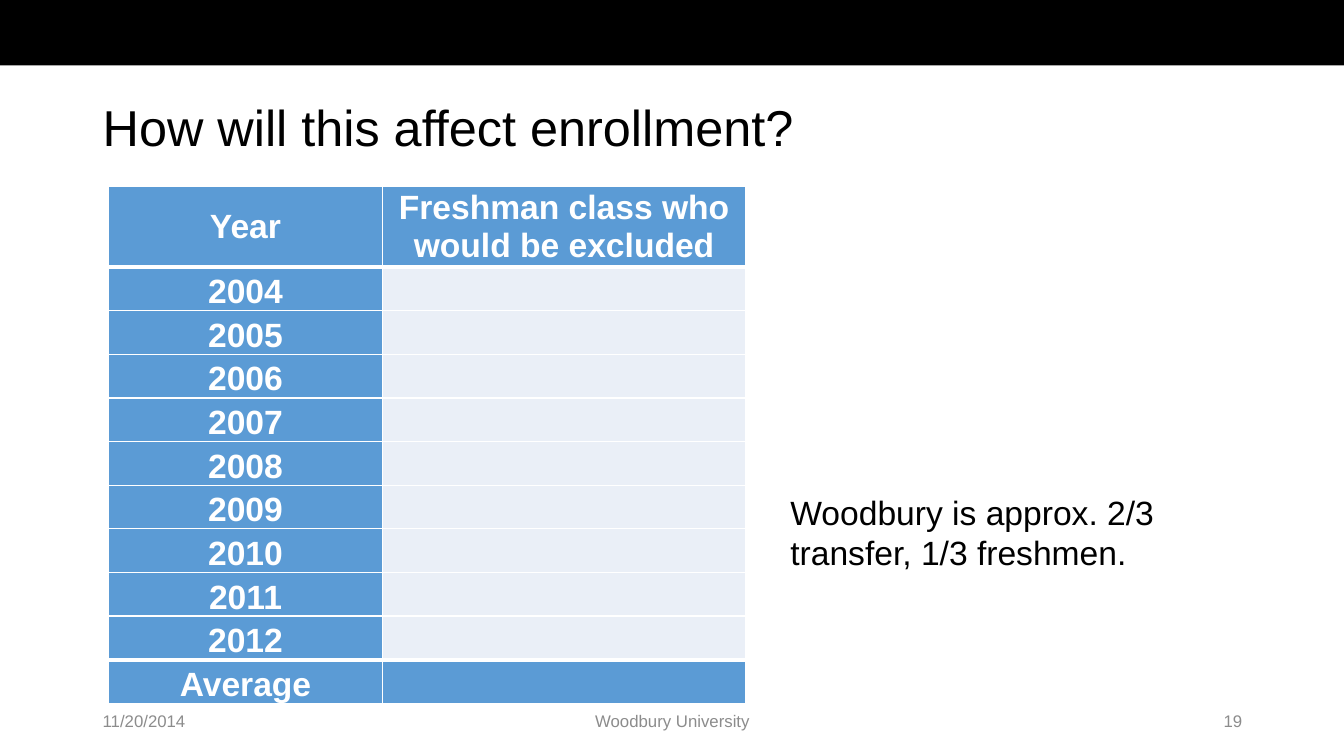
from lxml.etree import SubElement
from pptx import Presentation
from pptx.dml.color import RGBColor
from pptx.enum.shapes import MSO_SHAPE
from pptx.enum.text import MSO_ANCHOR, PP_ALIGN
from pptx.oxml.ns import qn
from pptx.util import Inches, Pt

WIDTH, HEIGHT = 13.33, 7.5
BLACK, WHITE, GREY = "000000", "FFFFFF", "8C8C8C"
BLUE, PALE = "5B9BD5", "EAEFF7"

TITLE = "How will this affect enrollment?"
NOTE = "Woodbury is approx. 2/3 transfer, 1/3 freshmen."
HEADINGS = ("Year", "Freshman class who would be excluded")
YEARS = [str(year) for year in range(2004, 2013)]
TABLE_ROWS = [HEADINGS] + [(year, "") for year in YEARS] + [("Average", "")]
FOOTERS = [  # text, left, width, alignment
    ("11/20/2014", 0.92, 3, PP_ALIGN.LEFT),
    ("Woodbury University", 4.42, 4.5, PP_ALIGN.CENTER),
    ("19", 9.42, 3, PP_ALIGN.RIGHT),
]

TABLE_LEFT, TABLE_TOP, TABLE_HEIGHT = 1.08, 1.85, 5.08
COLUMN_WIDTHS = (2.71, 3.61)
HEADER_HEIGHT = 0.75
ROW_HEIGHT = (TABLE_HEIGHT - HEADER_HEIGHT) / (len(TABLE_ROWS) - 1)


def color(code):
    return RGBColor.from_string(code)


def style_paragraph(para, size, code, align=PP_ALIGN.LEFT, bold=False):
    para.alignment = align
    for span in para.runs:
        span.font.name = "Arial"
        span.font.size = Pt(size)
        span.font.bold = bold
        span.font.color.rgb = color(code)


def add_text(page, text, area, size, code, align=PP_ALIGN.LEFT,
             anchor=MSO_ANCHOR.MIDDLE):
    box = page.shapes.add_textbox(*map(Inches, area))
    frame = box.text_frame
    frame.word_wrap = True
    frame.vertical_anchor = anchor
    frame.text = text
    style_paragraph(frame.paragraphs[0], size, code, align)
    return frame.paragraphs[0]


def add_borders(cell, top, bottom):
    """Draw white cell borders; top and bottom are widths in points."""
    properties = cell._tc.get_or_add_tcPr()
    for side, width in (("L", 1), ("R", 1), ("T", top), ("B", bottom)):
        line = SubElement(properties, qn(f"a:ln{side}"), w=str(Pt(width)))
        fill = SubElement(line, qn("a:solidFill"))
        SubElement(fill, qn("a:srgbClr"), val=WHITE)


def add_enrollment_table(page):
    last = len(TABLE_ROWS) - 1
    table = page.shapes.add_table(
        len(TABLE_ROWS), len(HEADINGS), Inches(TABLE_LEFT), Inches(TABLE_TOP),
        Inches(sum(COLUMN_WIDTHS)), Inches(TABLE_HEIGHT)).table
    table.horz_banding = False
    for column, width in zip(table.columns, COLUMN_WIDTHS):
        column.width = Inches(width)
    for r, texts in enumerate(TABLE_ROWS):
        table.rows[r].height = Inches(ROW_HEIGHT if r else HEADER_HEIGHT)
        for c, text in enumerate(texts):
            cell = table.cell(r, c)
            cell.margin_top = cell.margin_bottom = 0
            cell.vertical_anchor = MSO_ANCHOR.BOTTOM if r else MSO_ANCHOR.MIDDLE
            add_borders(cell, 3 if r in (1, last) else 1,
                        3 if r in (0, last - 1) else 1)
            cell.fill.solid()
            is_body = c == 1 and 0 < r < last
            cell.fill.fore_color.rgb = color(PALE if is_body else BLUE)
            if text:
                cell.text_frame.text = text
                style_paragraph(cell.text_frame.paragraphs[0], 24, WHITE,
                                PP_ALIGN.CENTER, bold=True)


def main():
    deck = Presentation()
    deck.slide_width, deck.slide_height = Inches(WIDTH), Inches(HEIGHT)
    page = deck.slides.add_slide(deck.slide_layouts[6])

    banner = page.shapes.add_shape(
        MSO_SHAPE.RECTANGLE, 0, 0, Inches(WIDTH), Inches(0.65))
    banner.shadow.inherit = False
    banner.fill.solid()
    banner.fill.fore_color.rgb = color(BLACK)
    banner.line.fill.background()

    title = add_text(page, TITLE, (0.92, 0.74, 11.5, 1.1), 36, BLACK)
    title.line_spacing = 0.9
    for text, left, width, align in FOOTERS:
        add_text(page, text, (left, 6.95, width, 0.4), 12, GREY, align)
    add_enrollment_table(page)
    add_text(page, NOTE, (7.74, 4.83, 4.98, 0.91), 24, BLACK,
             anchor=MSO_ANCHOR.TOP)
    deck.save("out.pptx")


if __name__ == "__main__":
    main()
